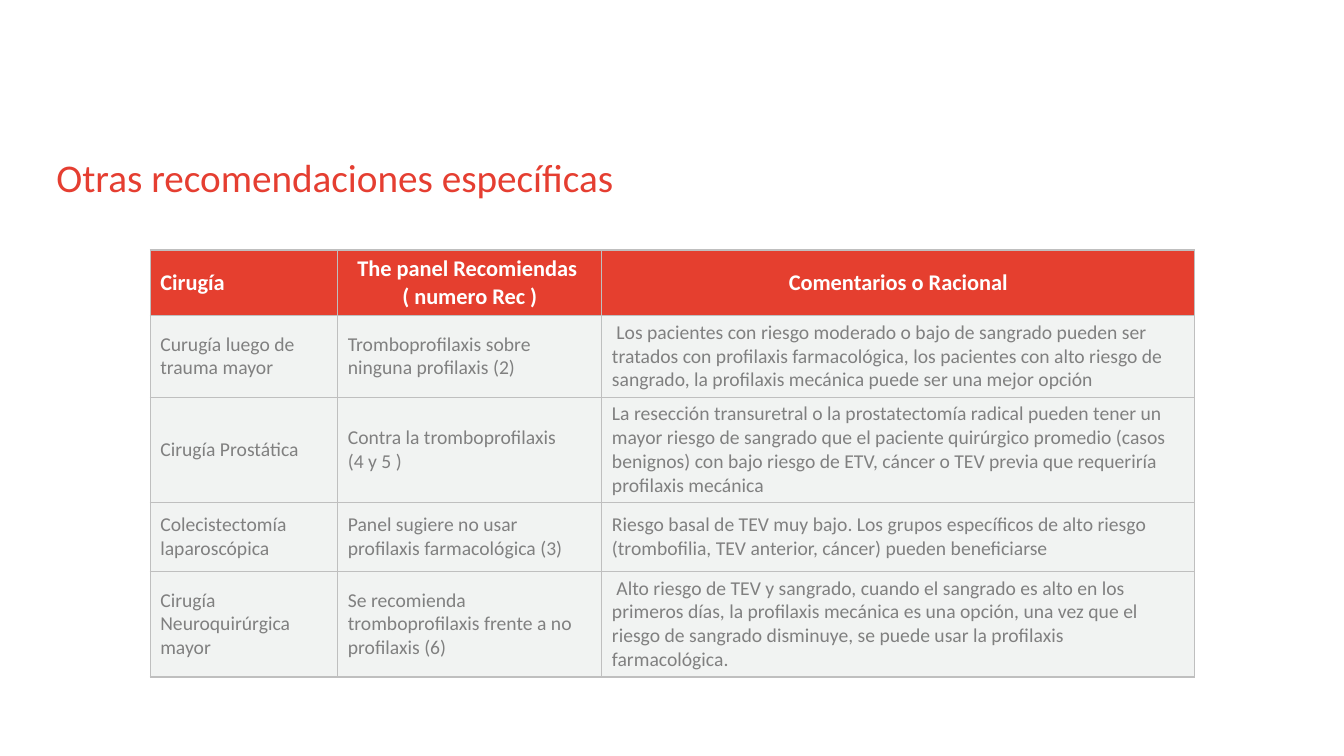
from lxml.etree import SubElement
from pptx import Presentation
from pptx.dml.color import RGBColor
from pptx.enum.text import MSO_ANCHOR as ANCHOR, PP_ALIGN as ALIGN
from pptx.oxml.ns import qn
from pptx.util import Inches, Pt

# Content
TITLE = "Otras recomendaciones específicas"
ROWS = [
    ("Cirugía", "The panel Recomiendas \v( numero Rec )", "Comentarios o Racional"),
    ("Curugía luego de trauma mayor",
     "Tromboprofilaxis sobre ninguna profilaxis (2)",
     " Los pacientes con riesgo moderado o bajo de sangrado pueden ser tratados con "
     "profilaxis farmacológica, los pacientes con alto riesgo de sangrado, la profilaxis "
     "mecánica puede ser una mejor opción"),
    ("Cirugía Prostática",
     "Contra la tromboprofilaxis \v(4 y 5 )",
     "La resección transuretral o la prostatectomía radical pueden tener un mayor riesgo "
     "de sangrado que el paciente quirúrgico promedio (casos benignos) con bajo riesgo de "
     "ETV, cáncer o TEV previa que requeriría profilaxis mecánica"),
    ("Colecistectomía laparoscópica",
     "Panel sugiere no usar profilaxis farmacológica (3)",
     "Riesgo basal de TEV muy bajo. Los grupos específicos de alto riesgo (trombofilia, "
     "TEV anterior, cáncer) pueden beneficiarse"),
    ("Cirugía Neuroquirúrgica mayor",
     "Se recomienda tromboprofilaxis frente a no profilaxis (6)",
     " Alto riesgo de TEV y sangrado, cuando el sangrado es alto en los primeros días, la "
     "profilaxis mecánica es una opción, una vez que el riesgo de sangrado disminuye, se "
     "puede usar la profilaxis farmacológica."),
]

# Layout and formats
COLORS = {"title": "E53E31", "header": "E53F2F", "header_text": "FFFFFF",
          "body": "F1F3F2", "body_text": "808080", "border": "BFBFBF"}
COL_WIDTHS = (1.86, 2.62, 5.88)
ROW_HEIGHTS = (0.65, 0.81, 1.04, 0.68, 1.05)
TABLE_LEFT, TABLE_TOP = 1.49, 2.48
TITLE_BOX = {"left": 0.46, "top": 1.47, "width": 12, "height": 0.78}
FONTS = {"title": {"name": "Calibri", "size": Pt(28), "bold": False},
         "header": {"name": "Calibri", "size": Pt(16), "bold": True},
         "body": {"name": "Calibri", "size": Pt(14), "bold": False}}


def format_text(p, kind, color):
    for r in p.runs:
        for name, value in FONTS[kind].items():
            setattr(r.font, name, value)
        r.font.color.rgb = RGBColor.from_string(COLORS[color])
    for br in p._p.findall(qn("a:br")):
        SubElement(br, qn("a:rPr"), sz=str(int(FONTS[kind]["size"].pt * 100)))


def add_borders(cell):
    tc_pr = cell._tc.get_or_add_tcPr()
    for i, side in enumerate(("lnL", "lnR", "lnT", "lnB")):
        ln = SubElement(tc_pr, qn(f"a:{side}"), w=str(Pt(1)))
        tc_pr.insert(i, ln)
        fill = SubElement(ln, qn("a:solidFill"))
        SubElement(fill, qn("a:srgbClr"), val=COLORS["border"])


def add_title(s):
    title = s.shapes.title
    for name, value in TITLE_BOX.items():
        setattr(title, name, Inches(value))
    tf = title.text_frame
    tf.text = TITLE
    tf.vertical_anchor = ANCHOR.TOP
    tf.paragraphs[0].alignment = ALIGN.LEFT
    format_text(tf.paragraphs[0], "title", "title")


def add_recommendations(s):
    table = s.shapes.add_table(
        len(ROWS), len(COL_WIDTHS), Inches(TABLE_LEFT), Inches(TABLE_TOP),
        Inches(sum(COL_WIDTHS)), Inches(sum(ROW_HEIGHTS))).table
    for column, width in zip(table.columns, COL_WIDTHS):
        column.width = Inches(width)
    for row, height in zip(table.rows, ROW_HEIGHTS):
        row.height = Inches(height)
    for i, texts in enumerate(ROWS):
        kind = "body" if i else "header"
        for j, text in enumerate(texts):
            cell = table.cell(i, j)
            cell.text = text
            cell.vertical_anchor = ANCHOR.MIDDLE
            cell.fill.solid()
            cell.fill.fore_color.rgb = RGBColor.from_string(COLORS[kind])
            p = cell.text_frame.paragraphs[0]
            p.alignment = ALIGN.CENTER if i == 0 and j else ALIGN.LEFT
            format_text(p, kind, f"{kind}_text")
            add_borders(cell)


def main():
    prs = Presentation()
    prs.slide_width, prs.slide_height = Inches(13.33), Inches(7.5)
    s = prs.slides.add_slide(prs.slide_layouts[5])
    add_title(s)
    add_recommendations(s)
    prs.save("out.pptx")


if __name__ == "__main__":
    main()
